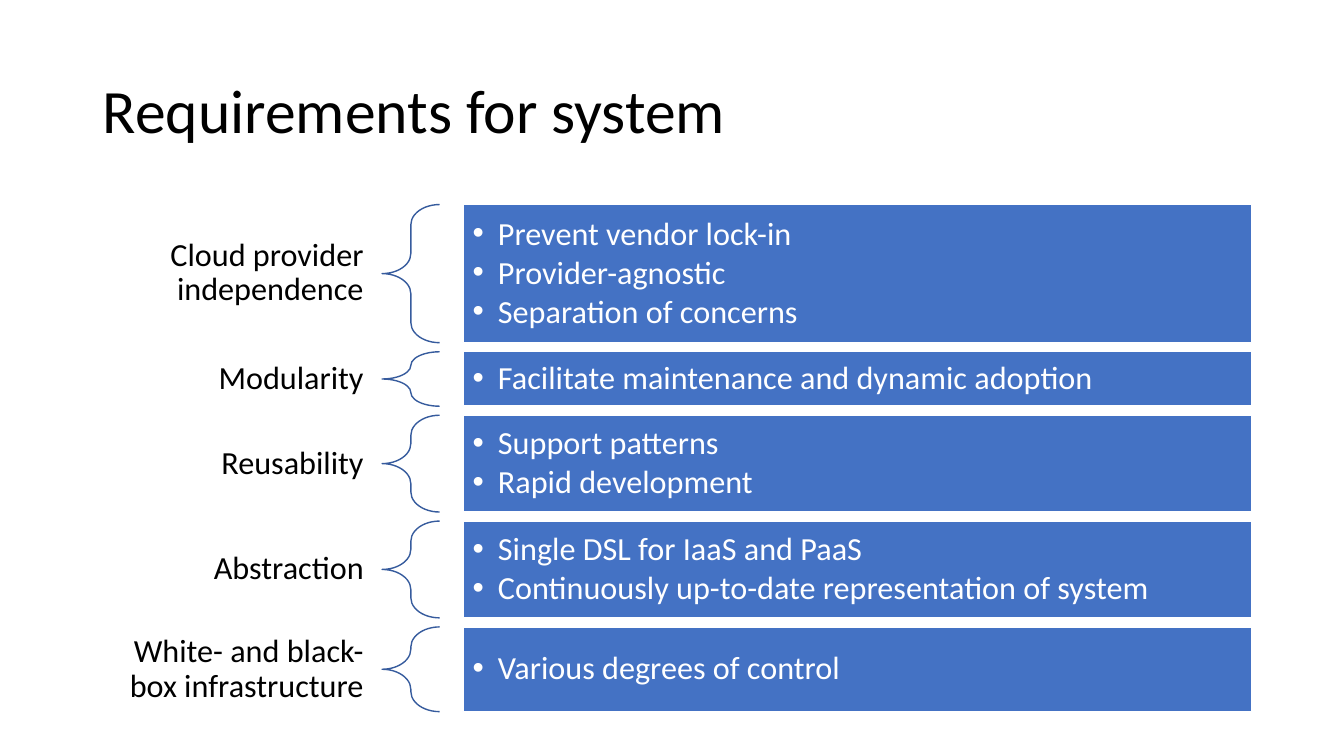
from dataclasses import dataclass

from lxml.etree import SubElement
from pptx import Presentation
from pptx.dml.color import RGBColor
from pptx.enum.shapes import MSO_SHAPE as Preset
from pptx.enum.text import MSO_ANCHOR as Anchor, MSO_AUTO_SIZE as AutoSize, PP_ALIGN as Align
from pptx.oxml.ns import qn
from pptx.shapes.autoshape import Shape
from pptx.slide import Slide
from pptx.text.text import TextFrame
from pptx.util import Emu, Pt

EMU_PER_PX = 9144
FONT = "Calibri"
BLACK = "000000"
WHITE = "FFFFFF"
BLUE = "4472C4"
BRACE_BLUE = "365B9D"
TEXT_SIZE = 23
LABEL_LEFT, LABEL_WIDTH = 92, 287
BRACE_LEFT, BRACE_WIDTH = 379, 57
BOX_LEFT, BOX_WIDTH = 459, 782
FIRST_TOP, ROW_GAP = 203, 9


@dataclass(frozen=True)
class Requirement:
    label: str
    label_height: int
    height: int
    points: tuple[str, ...]


REQUIREMENTS = (
    Requirement("Cloud provider independence", 84, 137,
                ("Prevent vendor lock-in", "Provider-agnostic", "Separation of concerns")),
    Requirement("Modularity", 50, 54, ("Facilitate maintenance and dynamic adoption",)),
    Requirement("Reusability", 50, 96, ("Support patterns", "Rapid development")),
    Requirement("Abstraction", 50, 96,
                ("Single DSL for IaaS and PaaS",
                 "Continuously up-to-date representation of system")),
    Requirement("White- and black- box infrastructure", 84, 84, ("Various degrees of control",)),
)


def px(length: int) -> Emu:
    return Emu(length * EMU_PER_PX)


def color(value: str) -> RGBColor:
    return RGBColor.from_string(value)


def format_text(frame: TextFrame, size: int, text_color: str, align: Align) -> None:
    frame.word_wrap = True
    frame.auto_size = AutoSize.NONE
    frame.vertical_anchor = Anchor.MIDDLE
    for paragraph in frame.paragraphs:
        paragraph.alignment = align
        paragraph.line_spacing = 0.9
        for run in paragraph.runs:
            run.font.name = FONT
            run.font.size = Pt(size)
            run.font.color.rgb = color(text_color)


def set_margins(frame: TextFrame, horizontal: int, vertical: int) -> None:
    frame.margin_left = frame.margin_right = px(horizontal)
    frame.margin_top = frame.margin_bottom = px(vertical)


def add_bullets(frame: TextFrame) -> None:
    for paragraph in frame.paragraphs:
        paragraph.space_after = Pt(3)
        properties = paragraph._p.get_or_add_pPr()
        properties.set("marL", str(px(25)))
        properties.set("indent", str(px(-25)))
        SubElement(properties, qn("a:buFont")).set("typeface", "Arial")
        SubElement(properties, qn("a:buChar")).set("char", "•")


def add_outlined(slide: Slide, preset: Preset, left: int, top: int, width: int,
                 height: int, line: str) -> Shape:
    shape = slide.shapes.add_shape(preset, px(left), px(top), px(width), px(height))
    shape.shadow.inherit = False
    shape.line.color.rgb = color(line)
    shape.line.width = Pt(1)
    return shape


def add_title(slide: Slide, text: str) -> None:
    title = slide.shapes.title
    title.left, title.top, title.width, title.height = px(92), px(40), px(1150), px(145)
    title.text_frame.text = text
    format_text(title.text_frame, 44, BLACK, Align.LEFT)


def add_requirement(slide: Slide, requirement: Requirement, top: int) -> None:
    label_top = top + (requirement.height - requirement.label_height) // 2
    label = slide.shapes.add_textbox(px(LABEL_LEFT), px(label_top), px(LABEL_WIDTH),
                                     px(requirement.label_height))
    label.text_frame.text = requirement.label
    set_margins(label.text_frame, 18, 6)
    format_text(label.text_frame, TEXT_SIZE, BLACK, Align.RIGHT)

    brace = add_outlined(slide, Preset.LEFT_BRACE, BRACE_LEFT, top, BRACE_WIDTH,
                         requirement.height, BRACE_BLUE)
    brace.fill.background()
    brace.adjustments[0] = 0.35

    box = add_outlined(slide, Preset.RECTANGLE, BOX_LEFT, top, BOX_WIDTH,
                       requirement.height, WHITE)
    box.fill.solid()
    box.fill.fore_color.rgb = color(BLUE)
    box.text_frame.text = "\n".join(requirement.points)
    set_margins(box.text_frame, 10, 10)
    format_text(box.text_frame, TEXT_SIZE, WHITE, Align.LEFT)
    add_bullets(box.text_frame)


def main() -> None:
    presentation = Presentation()
    presentation.slide_width, presentation.slide_height = px(1333), px(750)
    slide = presentation.slides.add_slide(presentation.slide_layouts[5])
    add_title(slide, "Requirements for system")
    top = FIRST_TOP
    for requirement in REQUIREMENTS:
        add_requirement(slide, requirement, top)
        top += requirement.height + ROW_GAP
    presentation.save("out.pptx")


if __name__ == "__main__":
    main()
